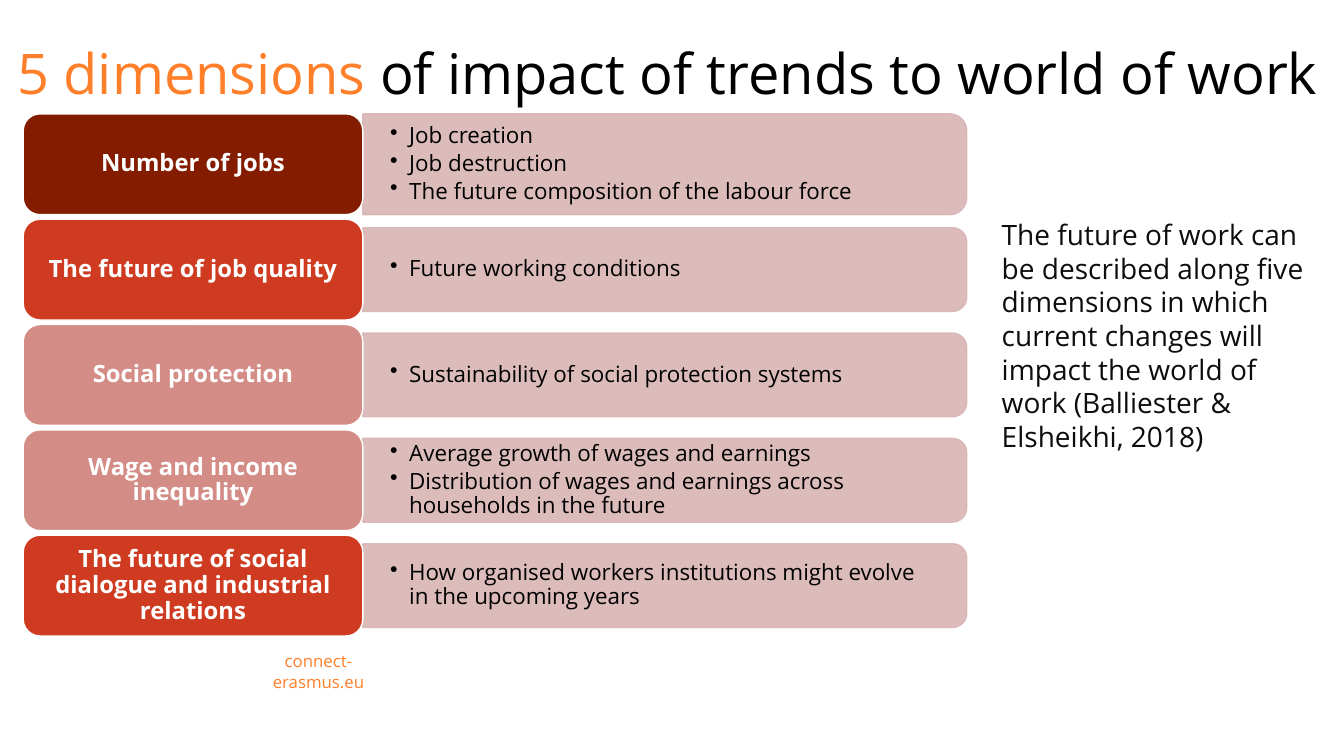
import lxml.etree
import pptx
import pptx.dml.color
import pptx.enum.shapes
import pptx.enum.text
import pptx.oxml.ns
import pptx.util

RGBColor = pptx.dml.color.RGBColor
Align = pptx.enum.text.PP_ALIGN
Anchor = pptx.enum.text.MSO_ANCHOR
Shape = pptx.enum.shapes.MSO_SHAPE
qn = pptx.oxml.ns.qn

ORANGE = RGBColor(0xFF, 0x7F, 0x2A)
BLACK = RGBColor(0x00, 0x00, 0x00)
CHARCOAL = RGBColor(0x0D, 0x0D, 0x0D)
WHITE = RGBColor(0xFF, 0xFF, 0xFF)
ROSE = RGBColor(0xD9, 0xB5, 0xB4)
MAROON = RGBColor(0x84, 0x1C, 0x00)
RED = RGBColor(0xCF, 0x3B, 0x20)
PINK = RGBColor(0xD3, 0x8D, 0x86)

WIDTH, HEIGHT = pptx.util.Inches(13.333), pptx.util.Inches(7.5)
COLUMN, ROW = WIDTH / 40, HEIGHT / 30

FONT = "Open Sans"
TITLE_FONT = {"name": FONT, "size": pptx.util.Pt(40)}
SIDEBAR_FONT = {"name": FONT, "size": pptx.util.Pt(20)}
FOOTER_FONT = {"name": FONT, "size": pptx.util.Pt(12)}
LABEL_FONT = {"name": FONT, "size": pptx.util.Pt(17), "bold": True}
POINT_FONT = {"name": FONT, "size": pptx.util.Pt(16)}

LABEL_SHARE = 0.36
ROW_GAP = 0.18 * ROW
BULLET_INDENT = pptx.util.Inches(0.19)

# Label, label colour, bar height as a share of the row, points
DIMENSIONS = [
    ("Number of jobs", MAROON, 1,
     ["Job creation", "Job destruction",
      "The future composition of the labour force"]),
    ("The future of job quality", RED, 0.83, ["Future working conditions"]),
    ("Social protection", PINK, 0.83,
     ["Sustainability of social protection systems"]),
    ("Wage and income inequality", PINK, 0.83,
     ["Average growth of wages and earnings",
      "Distribution of wages and earnings across households in the future"]),
    ("The future of social dialogue and industrial relations", RED, 0.83,
     ["How organised workers institutions might evolve in the upcoming years"]),
]


def grid(left, top, columns, rows):
    """Turn grid units into a box of slide lengths."""
    return left * COLUMN, top * ROW, columns * COLUMN, rows * ROW


def emu(box):
    return [pptx.util.Emu(round(length)) for length in box]


def assign(target, values):
    for name, value in values.items():
        setattr(target, name, value)


def write(paragraph, text, font, color):
    run = paragraph.add_run()
    run.text = text
    assign(run.font, font)
    run.font.color.rgb = color


def set_frame(frame, anchor, side=0.1, end=0.05):
    assign(frame, {
        "word_wrap": True, "vertical_anchor": anchor,
        "auto_size": pptx.enum.text.MSO_AUTO_SIZE.NONE,
        "margin_left": pptx.util.Inches(side),
        "margin_right": pptx.util.Inches(side),
        "margin_top": pptx.util.Inches(end),
        "margin_bottom": pptx.util.Inches(end)})


def add_panel(slide, kind, box, fill, line):
    panel = slide.shapes.add_shape(kind, *emu(box))
    panel.shadow.inherit = False
    panel.fill.solid()
    panel.fill.fore_color.rgb = fill
    panel.line.color.rgb = line
    panel.line.width = pptx.util.Pt(1)
    return panel


def add_title(slide, box):
    title = slide.shapes.title
    assign(title, dict(zip(("left", "top", "width", "height"), emu(box))))
    set_frame(title.text_frame, Anchor.BOTTOM)
    heading = title.text_frame.paragraphs[0]
    assign(heading, {"alignment": Align.LEFT, "line_spacing": 0.9})
    write(heading, "5 dimensions ", TITLE_FONT, ORANGE)
    write(heading, "of impact of trends to world of work", TITLE_FONT, BLACK)


def add_note(slide, box, text, font, color, anchor, alignment):
    frame = slide.shapes.add_textbox(*emu(box)).text_frame
    set_frame(frame, anchor)
    frame.paragraphs[0].alignment = alignment
    write(frame.paragraphs[0], text, font, color)


def add_bar(slide, box):
    """Draw a bar rounded on its right side, as a top-rounded shape turned by 90°."""
    left, top, width, height = box
    upright = (left + (width - height) / 2, top + (height - width) / 2,
               height, width)
    bar = add_panel(slide, Shape.ROUND_2_SAME_RECTANGLE, upright, ROSE, ROSE)
    bar.rotation = 90
    for color in bar.element.spPr.iter(qn("a:srgbClr")):
        lxml.etree.SubElement(color, qn("a:alpha"), val="90000")


def add_points(slide, box, points):
    frame = slide.shapes.add_textbox(*emu(box)).text_frame
    set_frame(frame, Anchor.MIDDLE, 0.27, 0.14)
    for index, point in enumerate(points):
        paragraph = frame.add_paragraph() if index else frame.paragraphs[0]
        properties = paragraph._p.get_or_add_pPr()
        properties.set("marL", str(BULLET_INDENT))
        properties.set("indent", str(-BULLET_INDENT))
        assign(paragraph, {"line_spacing": 0.9,
                           "space_after": pptx.util.Pt(2.4)})
        lxml.etree.SubElement(properties, qn("a:buChar"), char="•")
        write(paragraph, point, POINT_FONT, BLACK)


def add_label(slide, box, text, fill):
    label = add_panel(slide, Shape.ROUNDED_RECTANGLE, box, fill, WHITE)
    set_frame(label.text_frame, Anchor.MIDDLE, 0.07, 0.04)
    paragraph = label.text_frame.paragraphs[0]
    assign(paragraph, {"alignment": Align.CENTER, "line_spacing": 0.9})
    write(paragraph, text, LABEL_FONT, WHITE)


def add_dimensions(slide, box):
    left, top, width, height = box
    row_height = (height + ROW_GAP) / len(DIMENSIONS) - ROW_GAP
    label_width = LABEL_SHARE * width
    for index, (name, color, share, points) in enumerate(DIMENSIONS):
        row_top = top + index * (row_height + ROW_GAP)
        bar_height = share * row_height
        bar = (left + label_width, row_top + (row_height - bar_height) / 2,
               width - label_width, bar_height)
        add_bar(slide, bar)
        add_points(slide, bar, points)
        add_label(slide, (left, row_top, label_width, row_height), name, color)


def main():
    deck = pptx.Presentation()
    deck.slide_width, deck.slide_height = WIDTH, HEIGHT
    slide = deck.slides.add_slide(deck.slide_layouts[5])
    add_title(slide, grid(0.21, 1.08, 39.6, 3.36))
    add_note(slide, grid(29.52, 8.44, 9.78, 12.32),
             "The future of work can be described along five dimensions in "
             "which current changes will impact the world of work "
             "(Balliester & Elsheikhi, 2018)",
             SIDEBAR_FONT, CHARCOAL, Anchor.TOP, Align.LEFT)
    add_note(slide, grid(6.84, 26.04, 5.28, 1.2), "connect-erasmus.eu",
             FOOTER_FONT, ORANGE, Anchor.MIDDLE, Align.CENTER)
    add_dimensions(slide, grid(0.69, 4.52, 28.08, 20.72))
    deck.save("out.pptx")


if __name__ == "__main__":
    main()
